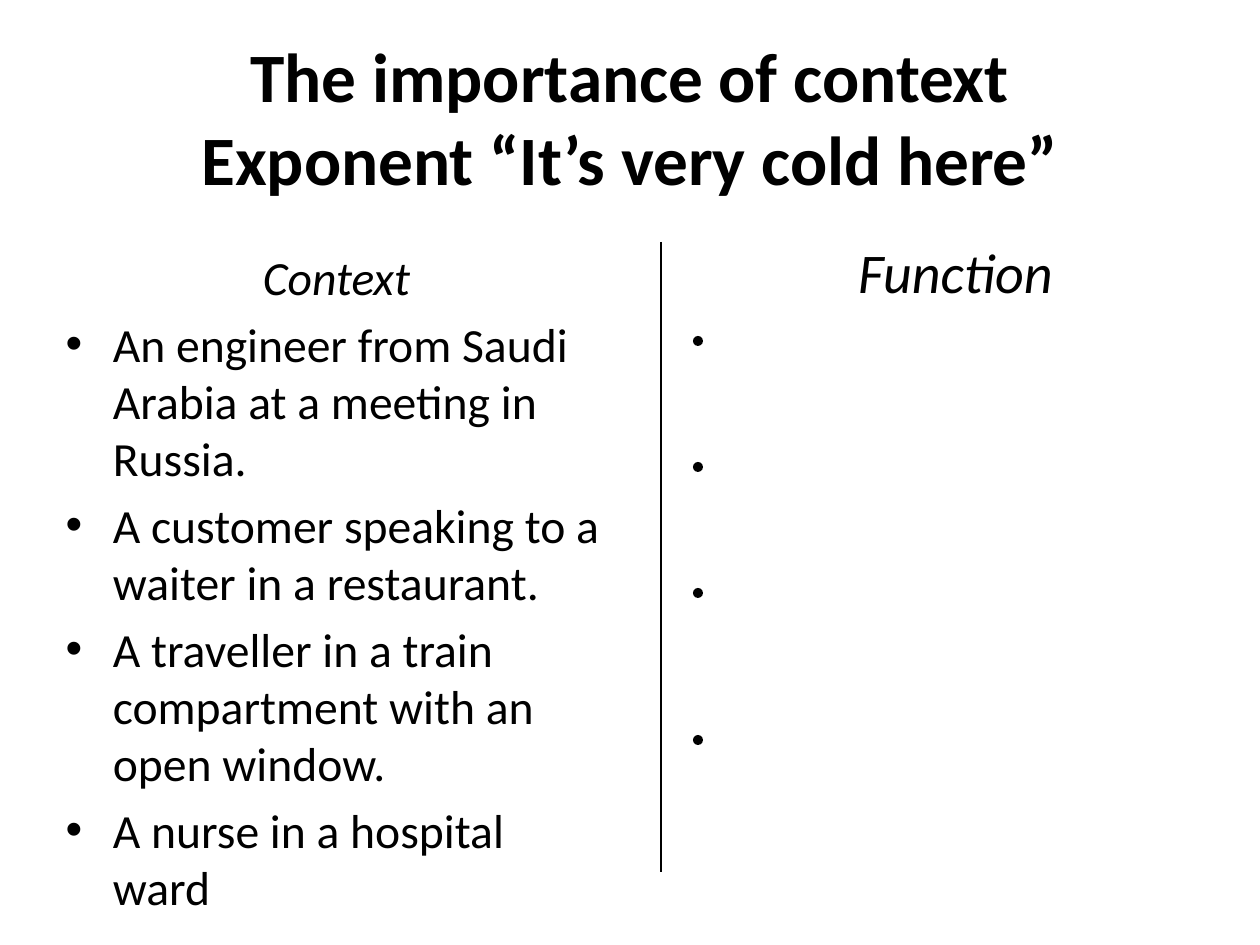
import pptx
import pptx.util
import pptx.dml.color
import pptx.enum.shapes
import pptx.enum.text
import pptx.oxml.ns
from lxml import etree

# Content
TITLE = "The importance of context\vExponent “It’s very cold here”"
CONTEXT_HEADING = "Context"
CONTEXTS = [
    "An engineer from Saudi Arabia at a meeting in Russia.",
    "A customer speaking to a waiter in a restaurant.",
    "A traveller in a train compartment with an open window.",
    "A nurse in a hospital ward",
]
FUNCTION_HEADING = "Function"

# Layout in px, 126 to the inch
PX = pptx.util.Inches(1) / 126
TITLE_BOX = (63, 38, 1134, 157)
CONTEXT_BOX = (53, 242, 567, 624)
FUNCTION_BOX = (693, 231, 525, 84)
DIVIDER = (661, 242, 661, 872)
DOT_LEFT, DOT_SIZE = 693, 10
DOT_TOPS = (336, 462, 588, 735)
INDENT = 47

FONT = "Calibri"
BLACK = pptx.dml.color.RGBColor(0, 0, 0)
CENTER = pptx.enum.text.PP_ALIGN.CENTER


def emu(*lengths):
    return [round(length * PX) for length in lengths]


def place(placeholder, box):
    placeholder.left, placeholder.top, placeholder.width, placeholder.height = emu(*box)
    placeholder.text_frame.auto_size = pptx.enum.text.MSO_AUTO_SIZE.NONE


def style(paragraph, size, bold=False, italic=False):
    for run in paragraph.runs:
        font = run.font
        font.name, font.size = FONT, pptx.util.Pt(size)
        font.bold, font.italic = bold, italic
        font.color.rgb = BLACK


def style_heading(paragraph, size):
    """Centred italic heading with a hanging indent and no bullet."""
    paragraph.alignment = CENTER
    style(paragraph, size, italic=True)
    properties = paragraph._p.get_or_add_pPr()
    indent = emu(INDENT)[0]
    properties.set("marL", str(indent))
    properties.set("indent", str(-indent))
    space = etree.SubElement(properties, pptx.oxml.ns.qn("a:spcBef"))
    etree.SubElement(space, pptx.oxml.ns.qn("a:spcPct")).set("val", "20000")
    etree.SubElement(properties, pptx.oxml.ns.qn("a:buNone"))


presentation = pptx.Presentation()
presentation.slide_width = pptx.util.Inches(10)
presentation.slide_height = pptx.util.Inches(7.5)
slide = presentation.slides.add_slide(presentation.slide_layouts[1])
shapes = slide.shapes

# Title
title = shapes.title
place(title, TITLE_BOX)
title.text_frame.text = TITLE
title.text_frame.vertical_anchor = pptx.enum.text.MSO_ANCHOR.MIDDLE
title.text_frame.paragraphs[0].alignment = CENTER
style(title.text_frame.paragraphs[0], 39.6, bold=True)

# Context column
contexts = slide.placeholders[1]
place(contexts, CONTEXT_BOX)
contexts.text_frame.text = "\n".join([CONTEXT_HEADING] + CONTEXTS)
heading, *items = contexts.text_frame.paragraphs
style_heading(heading, 27.2)
for item in items:
    style(item, 27.2)

# Function column heading
function = shapes.add_textbox(*emu(*FUNCTION_BOX))
function.text_frame.word_wrap = True
function.text_frame.text = FUNCTION_HEADING
style_heading(function.text_frame.paragraphs[0], 32)

# Divider between the columns
divider = shapes.add_connector(
    pptx.enum.shapes.MSO_CONNECTOR.STRAIGHT, *emu(*DIVIDER))
divider.line.color.rgb = BLACK
divider.line.width = pptx.util.Pt(0.75)
etree.SubElement(divider._element.spPr, pptx.oxml.ns.qn("a:effectLst"))

# Dots for the functions to fill in
for top in DOT_TOPS:
    dot = shapes.add_shape(
        pptx.enum.shapes.MSO_SHAPE.OVAL, *emu(DOT_LEFT, top, DOT_SIZE, DOT_SIZE))
    dot.shadow.inherit = False
    dot.fill.solid()
    dot.fill.fore_color.rgb = BLACK
    dot.line.fill.background()

presentation.save("out.pptx")
